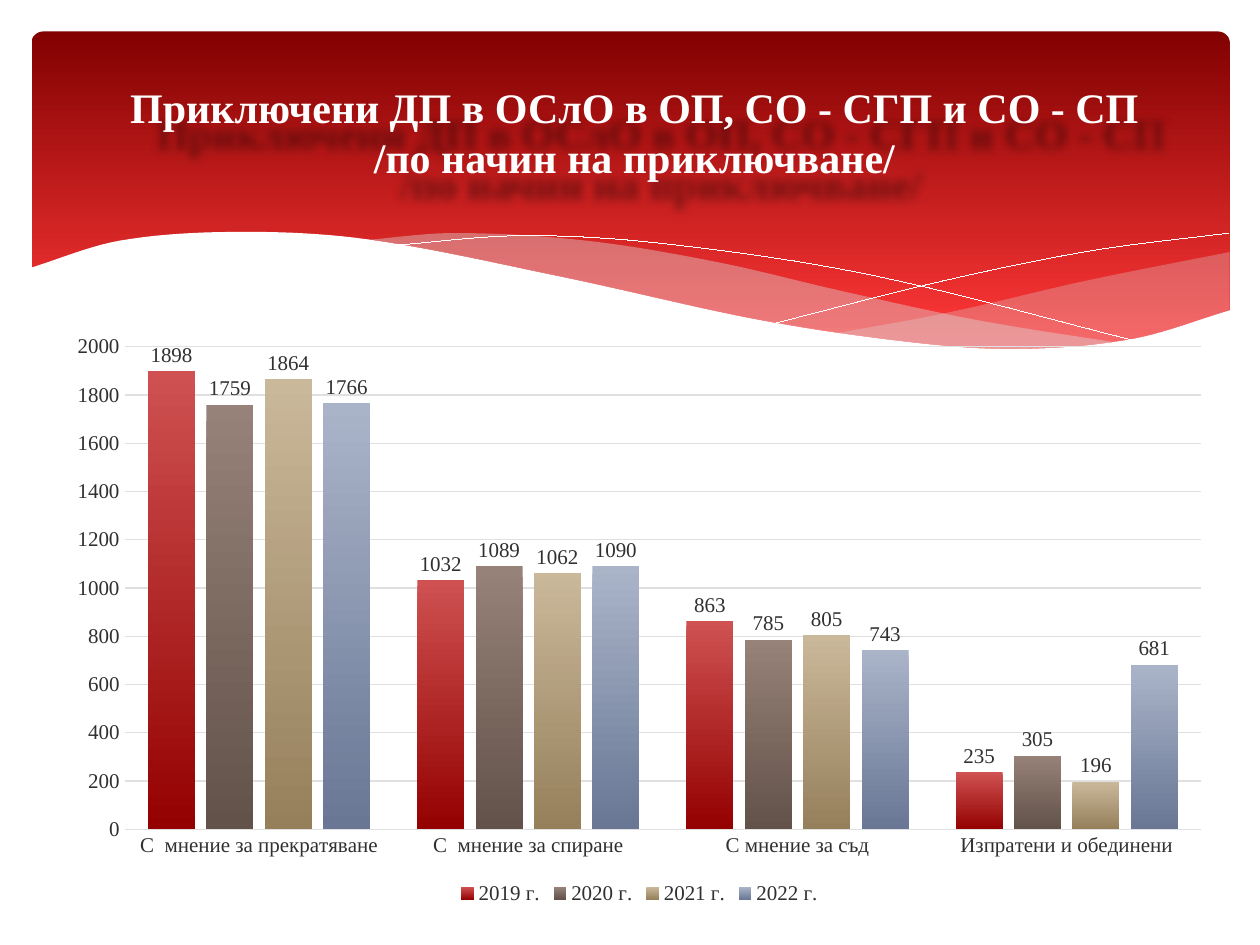
import lxml.etree
import pptx
import pptx.chart.data
import pptx.dml.color
import pptx.enum.chart
import pptx.enum.shapes
import pptx.enum.text
import pptx.oxml.ns
import pptx.util

COLORS = {
    "banner_top": "820101", "banner_bottom": "FE3737", "veil": "DEDEE0",
    "white": "FFFFFF", "shadow": "000000", "text": "303030", "grid": "E0E0E0",
    "2019 г.": ("CF5151", "940101"), "2020 г.": ("968278", "62524A"),
    "2021 г.": ("CAB89A", "96805B"), "2022 г.": ("AAB4C9", "697795"),
}
RGB = pptx.dml.color.RGBColor.from_string
qn = pptx.oxml.ns.qn
STEPS_PER_SPAN = 10

deck = pptx.Presentation()
deck.slide_width, deck.slide_height = pptx.util.Inches(10), pptx.util.Inches(7.5)
slide = deck.slides.add_slide(deck.slide_layouts[6])
CELL = deck.slide_width // 1000


def paint_gradient(fill, top, bottom, end=1):
    fill.gradient()
    fill.gradient_angle = 270
    for stop, color, position in zip(fill.gradient_stops, (top, bottom), (0, end)):
        stop.color.rgb = RGB(color)
        stop.position = position


def smooth_curve(*knots):
    """Points of a cubic Hermite curve through the knots, given in grid cells."""
    last = len(knots) - 1
    slopes = []
    for i in range(last + 1):
        (x0, y0), (x1, y1) = knots[max(i - 1, 0)], knots[min(i + 1, last)]
        slopes.append((y1 - y0) / (x1 - x0))
    points = [knots[0]]
    for i in range(last):
        (x0, y0), (x1, y1) = knots[i], knots[i + 1]
        width = x1 - x0
        for step in range(1, STEPS_PER_SPAN + 1):
            t = step / STEPS_PER_SPAN
            blend = t * t * (3 - 2 * t)
            bend = t * (1 - t) * (slopes[i] * (1 - t) - slopes[i + 1] * t)
            points.append((x0 + width * t, y0 + (y1 - y0) * blend + width * bend))
    return [(x * CELL, y * CELL) for x, y in points]


banner = slide.shapes.add_shape(
    pptx.enum.shapes.MSO_SHAPE.ROUNDED_RECTANGLE,
    *(CELL * n for n in (25, 25, 951, 270)))
banner.adjustments[0] = 0.034
banner.shadow.inherit = False
banner.line.fill.background()
paint_gradient(banner.fill, COLORS["banner_top"], COLORS["banner_bottom"], 0.9)

banner_edge = smooth_curve((23, 213), (95, 191), (190, 184), (292, 190), (447, 220),
                           (603, 254), (726, 272), (809, 277), (899, 269), (977, 246))
right_crest = smooth_curve((661, 265), (753, 248), (861, 223), (976, 200))
middle_crest = smooth_curve((286, 191), (361, 185), (465, 191), (569, 208),
                            (668, 231), (775, 254), (893, 273))
falling_line = smooth_curve((309, 195), (416, 187), (533, 194), (695, 219), (907, 272))
rising_line = smooth_curve((613, 257), (748, 223), (866, 199), (975, 185))

veils = []
for crest in (right_crest, middle_crest):
    left, right = crest[0][0], crest[-1][0]
    underside = [point for point in banner_edge if left < point[0] <= right]
    if right == right_crest[-1][0]:
        underside.append((right, banner_edge[-1][1]))
    veils.append(crest + underside[::-1])
right_veil, middle_veil = veils
page_below = banner_edge + [(977 * CELL, 329 * CELL), (23 * CELL, 329 * CELL)]

for outline, color, opacity in (
    (right_veil, "veil", 29), (middle_veil, "veil", 40),
    (falling_line, None, None), (rising_line, None, None), (page_below, "white", 100),
):
    builder = slide.shapes.build_freeform(*outline[0])
    builder.add_line_segments(outline[1:], close=color is not None)
    wave = builder.convert_to_shape()
    wave.shadow.inherit = False
    if color is None:
        wave.fill.background()
        wave.line.color.rgb = RGB(COLORS["white"])
        wave.line.width = pptx.util.Pt(0.01)
        continue
    wave.line.fill.background()
    wave.fill.solid()
    wave.fill.fore_color.rgb = RGB(COLORS[color])
    if opacity < 100:
        tint = wave.element.spPr.find(qn("a:solidFill"))[0]
        lxml.etree.SubElement(tint, qn("a:alpha"), val=str(opacity * 1000))

cases = pptx.chart.data.CategoryChartData()
cases.categories = ["С  мнение за прекратяване", "С  мнение за спиране",
                    "С мнение за съд", "Изпратени и обединени"]
for year, counts in {
    "2019 г.": (1898, 1032, 863, 235),
    "2020 г.": (1759, 1089, 785, 305),
    "2021 г.": (1864, 1062, 805, 196),
    "2022 г.": (1766, 1090, 743, 681),
}.items():
    cases.add_series(year, counts)

chart = slide.shapes.add_chart(
    pptx.enum.chart.XL_CHART_TYPE.COLUMN_CLUSTERED,
    *(CELL * n for n in (43, 257, 929, 465)), cases).chart
bars, legend = chart.plots[0], chart.legend
counts_axis, outcome_axis = chart.value_axis, chart.category_axis
chart.has_title = False
chart.has_legend = True
legend = chart.legend
no_tick = pptx.enum.chart.XL_TICK_MARK.NONE
for part, settings in (
    (legend, {"position": pptx.enum.chart.XL_LEGEND_POSITION.BOTTOM,
              "include_in_layout": False}),
    (bars, {"gap_width": 100, "overlap": -24, "vary_by_categories": False}),
    (counts_axis, {"minimum_scale": 0, "maximum_scale": 2000, "major_unit": 200}),
    (counts_axis, {"major_tick_mark": no_tick, "minor_tick_mark": no_tick}),
    (outcome_axis, {"major_tick_mark": no_tick, "minor_tick_mark": no_tick}),
):
    for attribute, value in settings.items():
        setattr(part, attribute, value)

counts_axis.format.line.fill.background()
for rule in (counts_axis.major_gridlines.format.line, outcome_axis.format.line):
    rule.color.rgb = RGB(COLORS["grid"])
    rule.width = pptx.util.Pt(0.75)

chart_fonts = [chart.font, legend.font, counts_axis.tick_labels.font,
               outcome_axis.tick_labels.font]
for series in bars.series:
    paint_gradient(series.format.fill, *COLORS[series.name])
    series.data_labels.show_value = True
    series.data_labels.position = pptx.enum.chart.XL_LABEL_POSITION.OUTSIDE_END
    chart_fonts.append(series.data_labels.font)

heading_box = slide.shapes.add_textbox(*(CELL * n for n in (43, 36, 921, 137)))
effects = lxml.etree.SubElement(heading_box.element.spPr, qn("a:effectLst"))
shadow = lxml.etree.SubElement(effects, qn("a:outerShdw"), blurRad="63500",
                               dist="254000", dir="2700000")
shade = lxml.etree.SubElement(shadow, qn("a:srgbClr"), val=COLORS["shadow"])
lxml.etree.SubElement(shade, qn("a:alpha"), val="40000")

heading = heading_box.text_frame
heading.word_wrap = True
heading.vertical_anchor = pptx.enum.text.MSO_ANCHOR.MIDDLE
heading_line = heading.paragraphs[0]
heading_line.alignment = pptx.enum.text.PP_ALIGN.CENTER
heading_line.add_run().text = "Приключени ДП в ОСлО в ОП, СО - СГП и СО - СП"
heading_line.add_line_break()
heading_line.add_run().text = "/по начин на приключване/"

heading_fonts = [run.font for run in heading_line.runs]
for fonts, size, bold, color in ((chart_fonts, 12, False, "text"),
                                 (heading_fonts, 24, True, "white")):
    style = {"name": "Times New Roman", "size": pptx.util.Pt(size), "bold": bold}
    for font in fonts:
        for attribute, value in style.items():
            setattr(font, attribute, value)
        font.color.rgb = RGB(COLORS[color])

deck.save("out.pptx")
